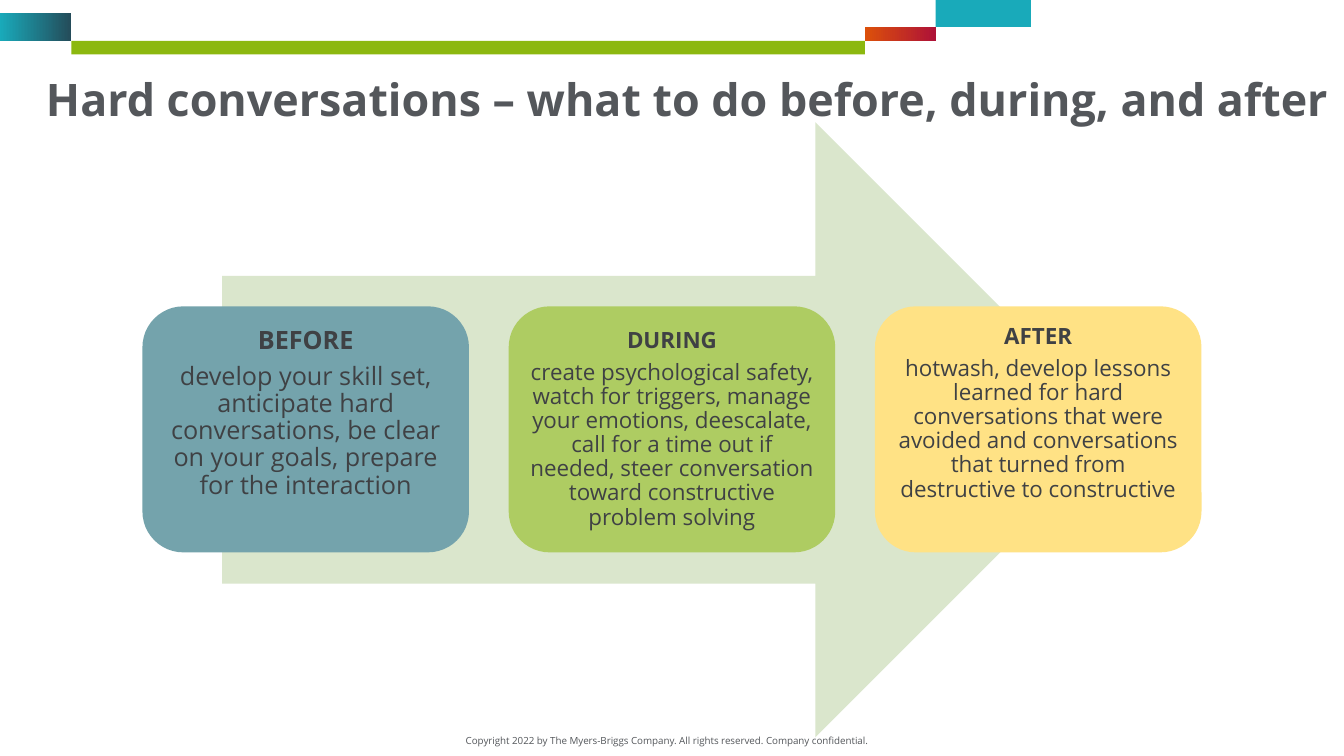
import pptx
import pptx.util
import pptx.dml.color
import pptx.enum.shapes
import pptx.enum.text
from lxml import etree

Cm = pptx.util.Cm
Pt = pptx.util.Pt
Shape = pptx.enum.shapes.MSO_SHAPE
Align = pptx.enum.text.PP_ALIGN
Anchor = pptx.enum.text.MSO_ANCHOR

TEAL = "19AABA"
GREEN = "8CB80F"
GREY = "54575B"
CHARCOAL = "3F4144"

CARDS = [
    ("BEFORE", "develop your skill set, anticipate hard conversations, be clear on your goals, "
     "prepare for the interaction", 18, "74A3AC", None, 0.8),
    ("DURING", "create psychological safety, watch for triggers, manage your emotions, deescalate, "
     "call for a time out if needed, steer conversation toward constructive problem solving",
     16, GREEN, 69, 0),
    ("AFTER", "hotwash, develop lessons learned for hard conversations that were avoided and "
     "conversations that turned from destructive to constructive", 16, "FFE285", None, 0.8),
]
CARDS[1] = CARDS[1][:4] + (56,) + CARDS[1][5:]


def color(value):
    return pptx.dml.color.RGBColor.from_string(value)


class SlideBuilder:
    font = "Open Sans"

    def __init__(self, page):
        self.page = page

    def shape(self, kind, left, top, width, height, fill, opacity=None):
        shape = self.page.shapes.add_shape(kind, Cm(left), Cm(top), Cm(width), Cm(height))
        shape.shadow.inherit = False
        shape.line.fill.background()
        shape.fill.solid()
        shape.fill.fore_color.rgb = color(fill)
        if opacity is not None:
            tag = pptx.oxml.ns.qn("a:srgbClr")
            swatch = next(shape.fill._xPr.iter(tag))
            etree.SubElement(swatch, pptx.oxml.ns.qn("a:alpha"), val=str(opacity * 1000))
        return shape

    def gradient(self, left, top, width, height, colors):
        shape = self.shape(Shape.RECTANGLE, left, top, width, height, colors[0])
        shape.fill.gradient()
        shape.fill.gradient_angle = 0
        for stop, value in zip(shape.fill.gradient_stops, colors):
            stop.color.rgb = color(value)

    def style(self, para, text, size, fill, bold=False, align=Align.LEFT, spacing=1.0):
        para.text = text
        para.alignment = align
        para.line_spacing = spacing
        para.font.name = self.font
        para.font.size = Pt(size)
        para.font.bold = bold
        para.font.color.rgb = color(fill)

    def text(self, left, top, width, height, text, size, **style):
        box = self.page.shapes.add_textbox(Cm(left), Cm(top), Cm(width), Cm(height))
        box.text_frame.word_wrap = True
        self.style(box.text_frame.paragraphs[0], text, size, GREY, **style)

    def card(self, left, heading, body, size, fill, opacity, lift):
        card = self.shape(Shape.ROUNDED_RECTANGLE, left, 7.72, 8.23, 6.2, fill, opacity)
        frame = card.text_frame
        frame.word_wrap = True
        frame.vertical_anchor = Anchor.MIDDLE
        frame.margin_left = frame.margin_right = frame.margin_top = Cm(0.18)
        frame.margin_bottom = Cm(0.18 + lift)
        title = frame.paragraphs[0]
        self.style(title, heading, size, CHARCOAL, True, Align.CENTER, 0.9)
        title.space_after = Pt(round(size * 0.35, 1))
        self.style(frame.add_paragraph(), body, size, CHARCOAL, False, Align.CENTER, 0.9)


def main():
    deck = pptx.Presentation()
    deck.slide_width = Cm(33.87)
    deck.slide_height = Cm(19.05)
    slide = SlideBuilder(deck.slides.add_slide(deck.slide_layouts[6]))

    slide.shape(Shape.RECTANGLE, 1.8, 1.03, 20, 0.34, GREEN)
    slide.gradient(0, 0.33, 1.8, 0.7, (TEAL, "244C5A"))
    slide.text(11.33, 18.39, 10.95, 0.56,
               "Copyright 2022 by The Myers-Briggs Company. All rights reserved. "
               "Company confidential.", 7, align=Align.CENTER)
    slide.shape(Shape.RECTANGLE, 23.58, -0.02, 2.4, 0.7, TEAL)
    slide.gradient(21.8, 0.68, 1.78, 0.35, ("DC500A", "AE1237"))
    slide.text(0.91, 1.83, 32.94, 2.51,
               "Hard conversations – what to do before, during, and after", 32,
               bold=True, spacing=0.9)

    slide.shape(Shape.RIGHT_ARROW, 5.6, 3.08, 22.7, 15.5, "DAE6CC")
    for index, card in enumerate(CARDS):
        slide.card(3.59 + index * 9.23, *card)

    deck.save("out.pptx")


if __name__ == "__main__":
    main()
